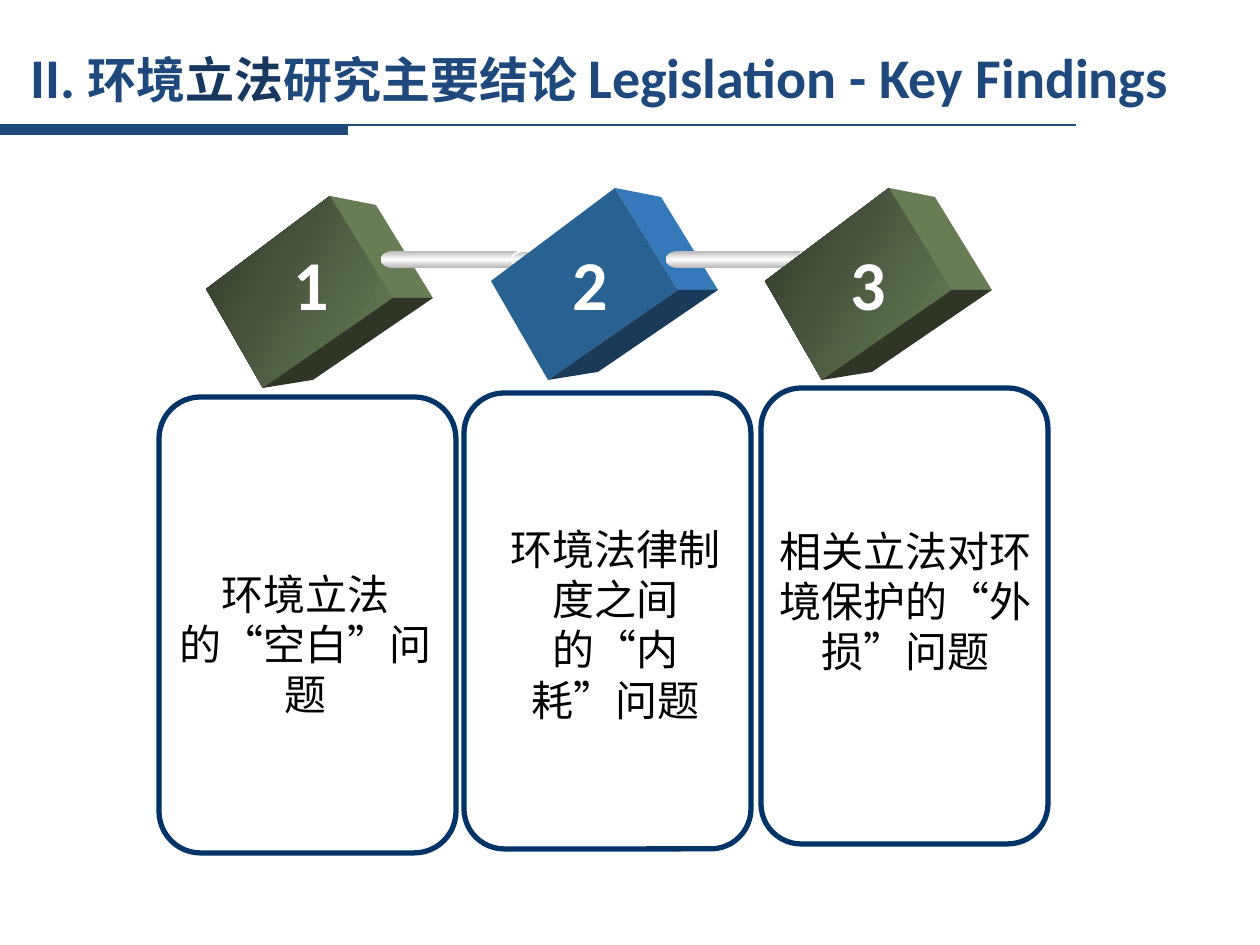
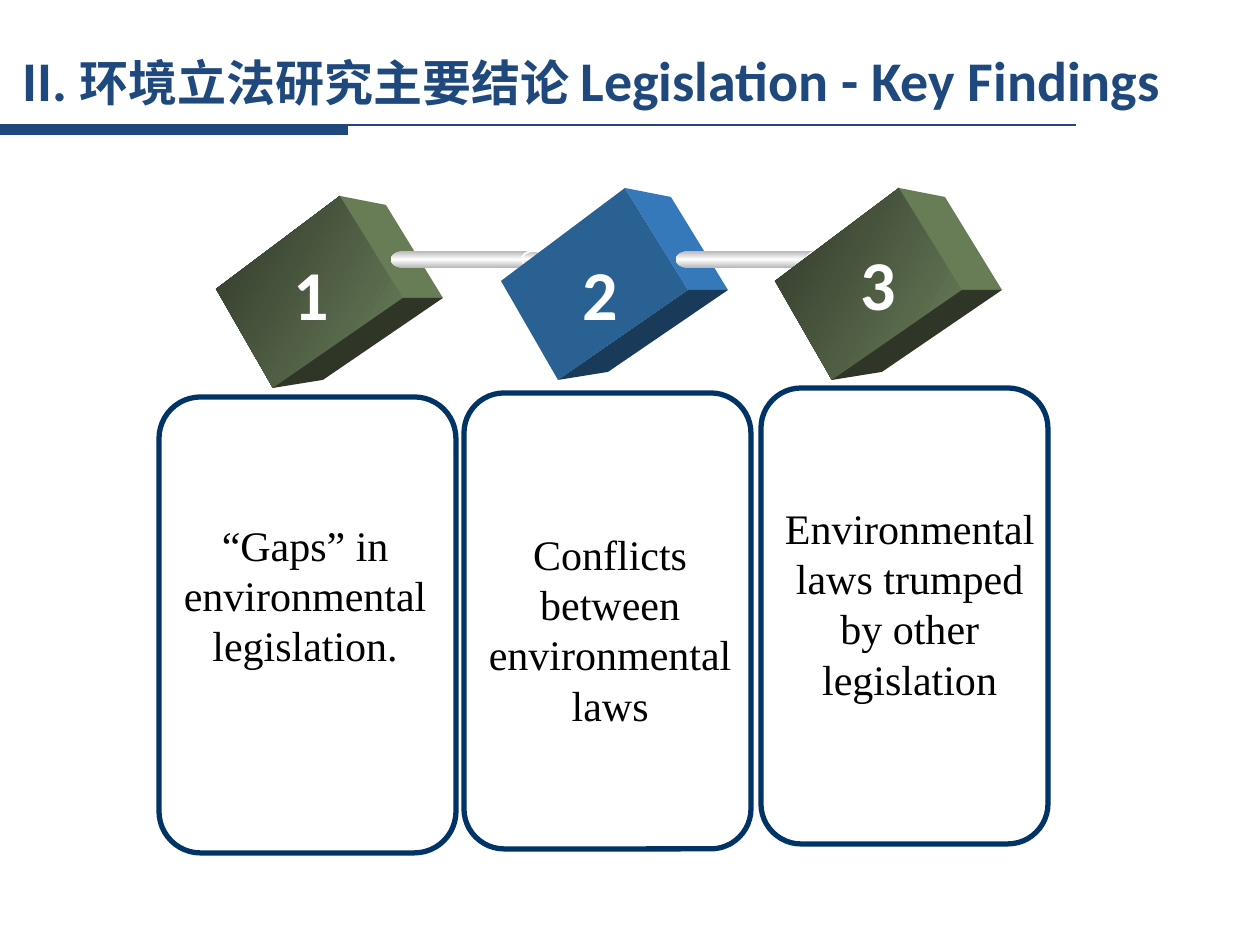
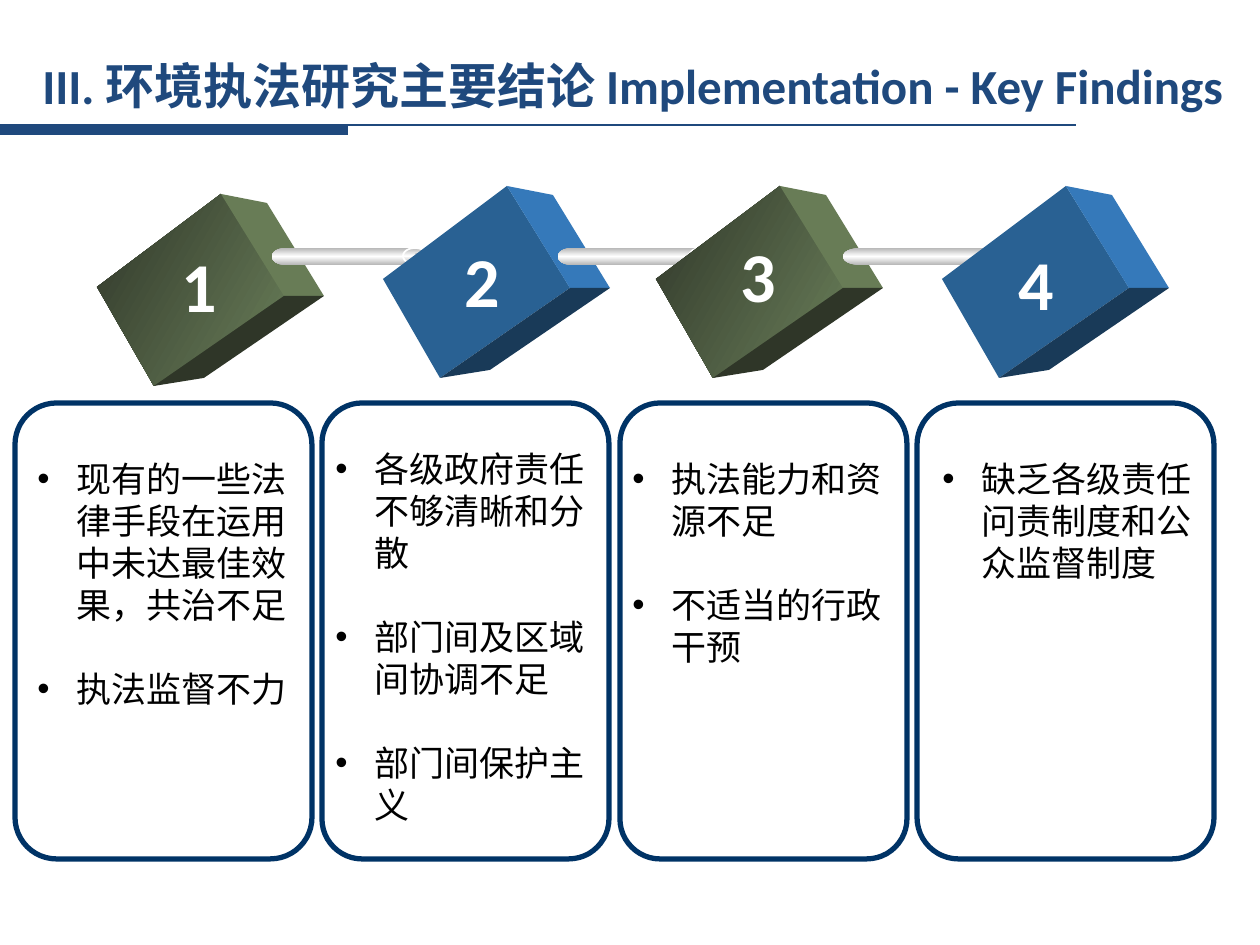
from copy import deepcopy

from lxml import etree
from pptx import Presentation
from pptx import util as u
from pptx.dml.color import RGBColor
from pptx.enum import lang, shapes, text
from pptx.oxml.ns import qn

PX = 914400 / 126
NAVY, DEEP_NAVY, CARD_LINE = "1F497D", "17375E", "003366"
WHITE, BLACK = "FFFFFF", "000000"
METAL = ("B6B6B6", WHITE, "B6B6B6")
GREEN = {"front": ("30372A", "6A7F59"), "side": ("687C56",), "base": ("2F3628",)}
BLUE = {"front": ("296193",), "side": ("3579BA",), "base": ("193A58",)}
FACES = {
    "front": [(-31, 79), (93, -14), (156, 88), (26, 178)],
    "side": [(93, -14), (139, -5), (196, 88), (156, 88)],
    "base": [(156, 88), (196, 88), (76, 170), (26, 178)],
}
OVAL, RECT = shapes.MSO_SHAPE.OVAL, shapes.MSO_SHAPE.RECTANGLE
ROD_PARTS = [(OVAL, 0, 0, 26, 17), (RECT, 14, 0, 129, 17),
             (OVAL, 131, 0, 24, 16), (OVAL, 143, 5, 6, 5)]
RING = 2


def paint(fill, *colors, angle=90):
    if len(colors) == 1:
        fill.solid()
        fill.fore_color.rgb = RGBColor.from_string(colors[0])
        return
    fill.gradient()
    fill.gradient_angle = angle
    last_stop = fill.gradient_stops[-1]._gs
    for _ in colors[2:]:
        last_stop.addnext(deepcopy(last_stop))
    for index, (stop, color) in enumerate(zip(fill.gradient_stops, colors)):
        stop.color.rgb = RGBColor.from_string(color)
        stop.position = index / (len(colors) - 1)


def write(slide, box, paragraphs, size=24, color=BLACK, font="Times New Roman", bold=False,
          align=text.PP_ALIGN.CENTER, anchor=text.MSO_ANCHOR.TOP, bullet=False,
          fixed_lines=True, right_inset=13):
    frame = slide.shapes.add_textbox(*[round(n * PX) for n in box]).text_frame
    frame.word_wrap = True
    frame.vertical_anchor = anchor
    frame.margin_right = round(right_inset * PX)
    for index, runs in enumerate(paragraphs):
        paragraph = frame.add_paragraph() if index else frame.paragraphs[0]
        paragraph.alignment = align
        if fixed_lines:
            paragraph.line_spacing = u.Pt(size * 1.2)
        if index:
            paragraph.space_before = u.Pt(size * 1.2)
        if bullet:
            properties = paragraph._p.get_or_add_pPr()
            properties.set("marL", str(round(39 * PX)))
            properties.set("indent", str(round(-39 * PX)))
            etree.SubElement(properties, qn("a:buFont")).set("typeface", "Arial")
            etree.SubElement(properties, qn("a:buChar")).set("char", "•")
        for words, look in [(runs, {})] if isinstance(runs, str) else runs:
            run = paragraph.add_run()
            run.text = words
            run.font.name = font
            run.font.bold = bold
            run.font.size = u.Pt(look.get("size", size))
            paint(run.font.fill, look.get("color", color))
            if any("一" <= letter <= "龥" for letter in words):
                run.font.language_id = lang.MSO_LANGUAGE_ID.SIMPLIFIED_CHINESE


large = {"size": 32}
legislation_cards = [(159, 397, 297), (464, 393, 287), (761, 388, 287)]

pages = [
    {
        "title_box": (18, 37, 1242, 79),
        "title": [("II. ", large), ("环境", {}), ("立法", {"color": DEEP_NAVY}),
                  ("研究主要结论 ", {}), ("Legislation - Key Findings", large)],
        "cards": legislation_cards,
        "cubes": [(237, 210), (522, 202), (796, 202)],
        "rod_top": 251,
        "numbers": [(312, 234), (591, 234), (869, 234)],
        "texts": [((160, 562, 291, 217), ["环境立法的“空白”问题"]),
                  ((480, 517, 271, 217), ["环境法律制度之间的“内耗”问题"]),
                  ((762, 519, 287, 217), ["相关立法对环境保护的“外损”问题"])],
        "style": {},
    },
    {
        "title_box": (10, 40, 1242, 79),
        "title": [("II. ", large), ("环境立法研究主要结论 ", {}),
                  ("Legislation - Key Findings", large)],
        "cards": legislation_cards,
        "cubes": [(247, 210), (532, 202), (806, 202)],
        "rod_top": 251,
        "numbers": [(312, 244), (601, 244), (879, 234)],
        "texts": [((160, 513, 291, 217), ["“Gaps” in environmental legislation."]),
                  ((467, 522, 287, 217), ["Conflicts between environmental laws"]),
                  ((769, 496, 282, 217), ["Environmental laws trumped by other legislation"])],
        "style": {},
    },
    {
        "title_box": (30, 45, 1230, 79),
        "title": "III. 环境执法研究主要结论 Implementation - Key Findings",
        "cards": [(15, 403, 297), (322, 403, 287), (620, 403, 287), (917, 403, 297)],
        "cubes": [(128, 208), (414, 200), (687, 200), (973, 200)],
        "rod_top": 248,
        "numbers": [(200, 236), (483, 231), (759, 226), (1037, 234)],
        "texts": [((25, 451, 291, 340), ["现有的一些法律手段在运用中未达最佳效果，共治不足", "执法监督不力"]),
                  ((323, 441, 287, 390), ["各级政府责任不够清晰和分散", "部门间及区域间协调不足", "部门间保护主义"]),
                  ((620, 451, 277, 220), ["执法能力和资源不足", "不适当的行政干预"]),
                  ((930, 451, 307, 140), ["缺乏各级责任问责制度和公众监督制度"])],
        "style": {"size": 20, "font": "Calibri", "bullet": True, "align": text.PP_ALIGN.LEFT},
    },
]

presentation = Presentation()
presentation.slide_width, presentation.slide_height = u.Inches(10), u.Inches(7.5)

for page in pages:
    slide = presentation.slides.add_slide(presentation.slide_layouts[6])

    rule = slide.shapes.add_connector(shapes.MSO_CONNECTOR.STRAIGHT,
                                      *[round(n * PX) for n in (0, 125, 1076, 125)])
    paint(rule.line.fill, NAVY)
    rule.line.width = u.Pt(1.5)
    etree.SubElement(rule._element.spPr, qn("a:effectLst"))
    band = slide.shapes.add_shape(RECT, *[round(n * PX) for n in (0, 125, 348, 10)])
    paint(band.fill, NAVY)
    band.line.fill.background()

    for left, top, width in page["cards"]:
        card = slide.shapes.add_shape(shapes.MSO_SHAPE.ROUNDED_RECTANGLE,
                                      *[round(n * PX) for n in (left, top, width, 456)])
        card.adjustments[0] = 0.14
        card.fill.background()
        paint(card.line.fill, CARD_LINE)
        card.line.width = u.Pt(3)

    for index, (left, top) in enumerate(page["cubes"]):
        for face, colors in (BLUE if index % 2 else GREEN).items():
            points = [(left + x, top + y) for x, y in FACES[face]]
            builder = slide.shapes.build_freeform(*points[0], scale=PX)
            builder.add_line_segments(points[1:], close=True)
            side = builder.convert_to_shape()
            paint(side.fill, *colors, angle=330)
            side.line.fill.background()
        if index == len(page["cubes"]) - 1:
            continue
        rod_left, stretch = (left + 156, 1.3) if index == 2 else (left + 144, 1)
        for part, (kind, x, y, width, height) in enumerate(ROD_PARTS):
            piece = slide.shapes.add_shape(
                kind, *[round(n * PX) for n in (rod_left + x * stretch, page["rod_top"] + y,
                                                width * stretch, height)])
            paint(piece.fill, *METAL)
            if part == RING:
                paint(piece.line.fill, WHITE)
                piece.line.width = u.Pt(1)
            else:
                piece.line.fill.background()

    for number, (center, top) in enumerate(page["numbers"], 1):
        write(slide, (center - 39, top, 78, 97), [str(number)], size=40, color=WHITE,
              font="Calibri", bold=True, fixed_lines=False)
    for box, paragraphs in page["texts"]:
        write(slide, box, paragraphs, **page["style"])
    write(slide, page["title_box"], [page["title"]], size=28, color=NAVY, font="Calibri",
          bold=True, align=text.PP_ALIGN.LEFT, anchor=text.MSO_ANCHOR.MIDDLE,
          fixed_lines=False, right_inset=0)

    for shape in slide.shapes:
        if shape.shape_type in (shapes.MSO_SHAPE_TYPE.AUTO_SHAPE, shapes.MSO_SHAPE_TYPE.FREEFORM):
            shape.shadow.inherit = False

presentation.save("out.pptx")
